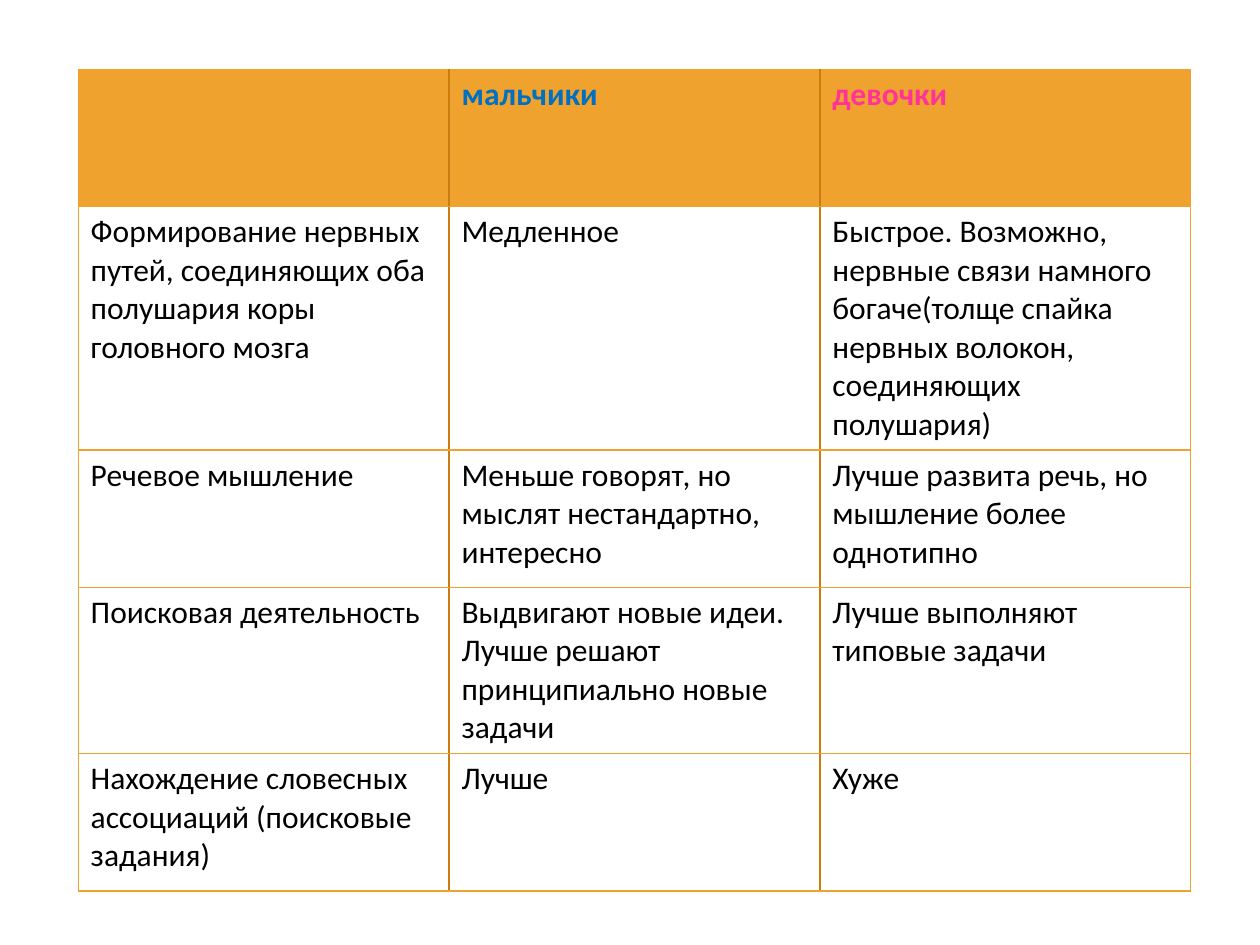
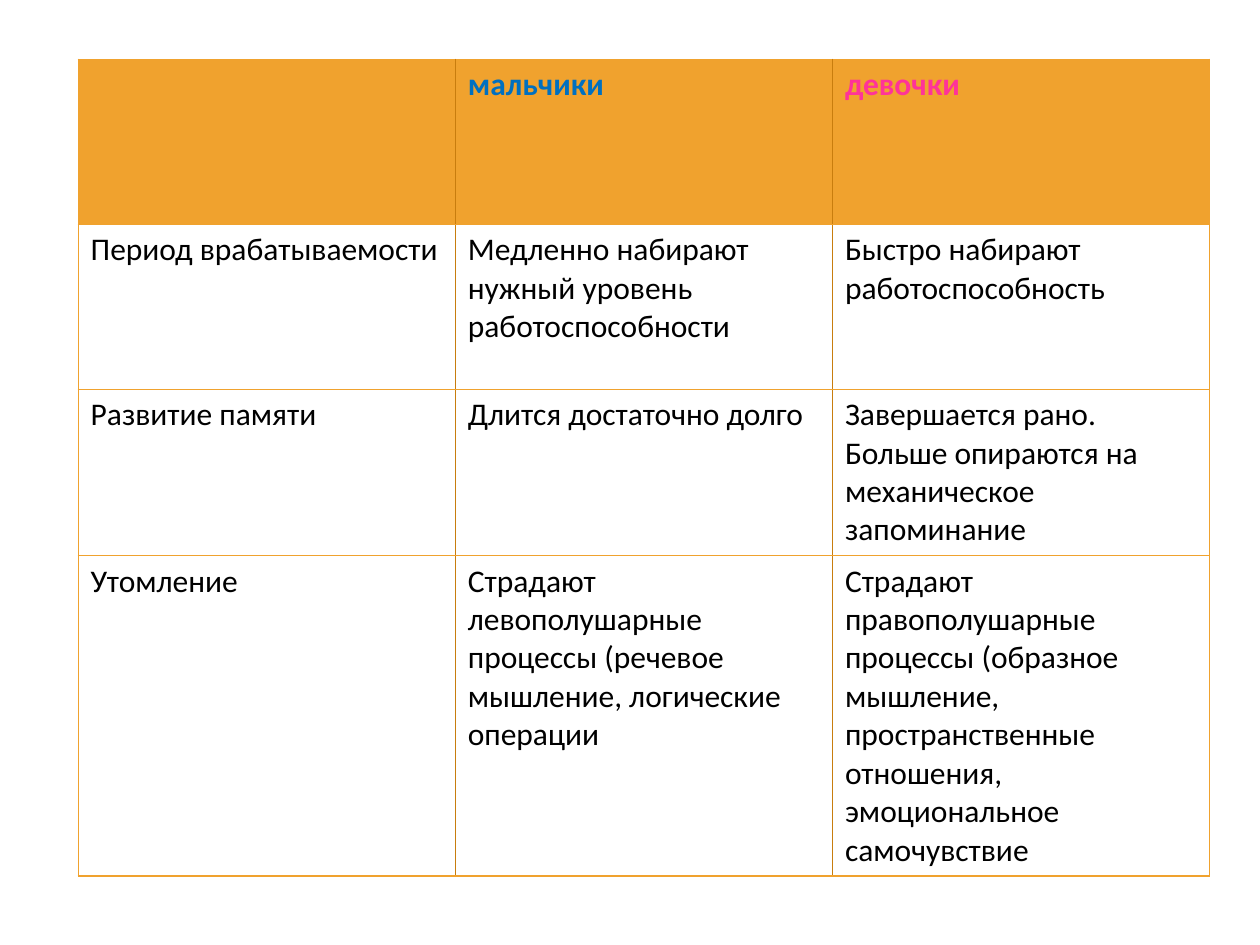
from dataclasses import dataclass

from lxml.etree import SubElement
from pptx import Presentation
from pptx.dml.color import RGBColor
from pptx.oxml import parse_xml
from pptx.oxml.ns import nsdecls, qn
from pptx.util import Inches, Pt

AMBER = RGBColor(0xF0, 0xA2, 0x2E)
DARK_AMBER = RGBColor(0xC8, 0x7D, 0x0E)
BLUE = RGBColor(0x00, 0x70, 0xC0)
PINK = RGBColor(0xFF, 0x33, 0x99)
BLACK = RGBColor(0, 0, 0)

FONT = {"name": "Calibri", "size": Pt(18)}
HEADINGS = ("", "мальчики", "девочки")
HEADING_COLORS = (BLACK, BLUE, PINK)
LEFT = 0.62


@dataclass(frozen=True)
class Border:
    color: RGBColor
    width: float


OUTLINE = Border(AMBER, 0.79)
DIVIDER = Border(DARK_AMBER, 1)


@dataclass(frozen=True)
class Comparison:
    top: float
    width: float
    height: float
    row_heights: tuple[float, ...]
    rows: tuple[tuple[str, str, str], ...]


COMPARISONS = (
    Comparison(0.55, 8.83, 6.46, (1.09, 1.77, 1.09, 1.21, 1.09), (
        ("Формирование нервных путей, соединяющих оба полушария коры головного мозга",
         "Медленное",
         "Быстрое. Возможно, нервные связи намного богаче(толще спайка нервных волокон, "
         "соединяющих полушария)"),
        ("Речевое мышление",
         "Меньше говорят, но мыслят нестандартно, интересно",
         "Лучше развита речь, но мышление более однотипно"),
        ("Поисковая деятельность",
         "Выдвигают новые идеи. Лучше решают принципиально новые задачи",
         "Лучше выполняют типовые задачи"),
        ("Нахождение словесных ассоциаций (поисковые задания)", "Лучше", "Хуже"),
    )),
    Comparison(0.47, 8.98, 6.44, (1.31,) * 4, (
        ("Период врабатываемости",
         "Медленно набирают нужный уровень работоспособности",
         "Быстро набирают работоспособность"),
        ("Развитие памяти",
         "Длится достаточно долго",
         "Завершается рано. Больше опираются на механическое запоминание"),
        ("Утомление",
         "Страдают левополушарные процессы (речевое мышление, логические операции",
         "Страдают правополушарные процессы (образное мышление, пространственные "
         "отношения, эмоциональное самочувствие"),
    )),
)


def set_borders(cell, column: int) -> None:
    """Dark dividers between columns, amber lines everywhere else."""
    sides = {
        "lnL": DIVIDER if column > 0 else OUTLINE,
        "lnR": DIVIDER if column < len(HEADINGS) - 1 else OUTLINE,
        "lnT": OUTLINE,
        "lnB": OUTLINE,
    }
    tc_pr = cell._tc.get_or_add_tcPr()
    for i, (side, border) in enumerate(sides.items()):
        ln = parse_xml(f'<a:{side} {nsdecls("a")} w="{Pt(border.width)}"/>')
        fill = SubElement(ln, qn("a:solidFill"))
        SubElement(fill, qn("a:srgbClr"), val=str(border.color))
        tc_pr.insert(i, ln)


def fill_cell(cell, text: str, column: int, is_header: bool) -> None:
    if is_header:
        cell.fill.solid()
        cell.fill.fore_color.rgb = AMBER
    else:
        cell.fill.background()
    set_borders(cell, column)
    p = cell.text_frame.paragraphs[0]
    if not text:
        p.font.size = FONT["size"]
        return
    r = p.add_run()
    r.text = text
    for name, value in {**FONT, "bold": is_header}.items():
        setattr(r.font, name, value)
    r.font.color.rgb = HEADING_COLORS[column] if is_header else BLACK


def add_comparison(prs, data: Comparison) -> None:
    slide = prs.slides.add_slide(prs.slide_layouts[6])
    rows = (HEADINGS, *data.rows)
    frame = slide.shapes.add_table(
        len(rows), len(HEADINGS),
        Inches(LEFT), Inches(data.top), Inches(data.width), Inches(data.height))
    table = frame.table
    table.horz_banding = False
    for i, (texts, height) in enumerate(zip(rows, data.row_heights)):
        table.rows[i].height = Inches(height)
        for j, text in enumerate(texts):
            fill_cell(table.cell(i, j), text, j, is_header=i == 0)
    frame.height = Inches(data.height)


def main() -> None:
    prs = Presentation()
    prs.slide_width, prs.slide_height = Inches(10), Inches(7.5)
    for data in COMPARISONS:
        add_comparison(prs, data)
    prs.save("out.pptx")


if __name__ == "__main__":
    main()
